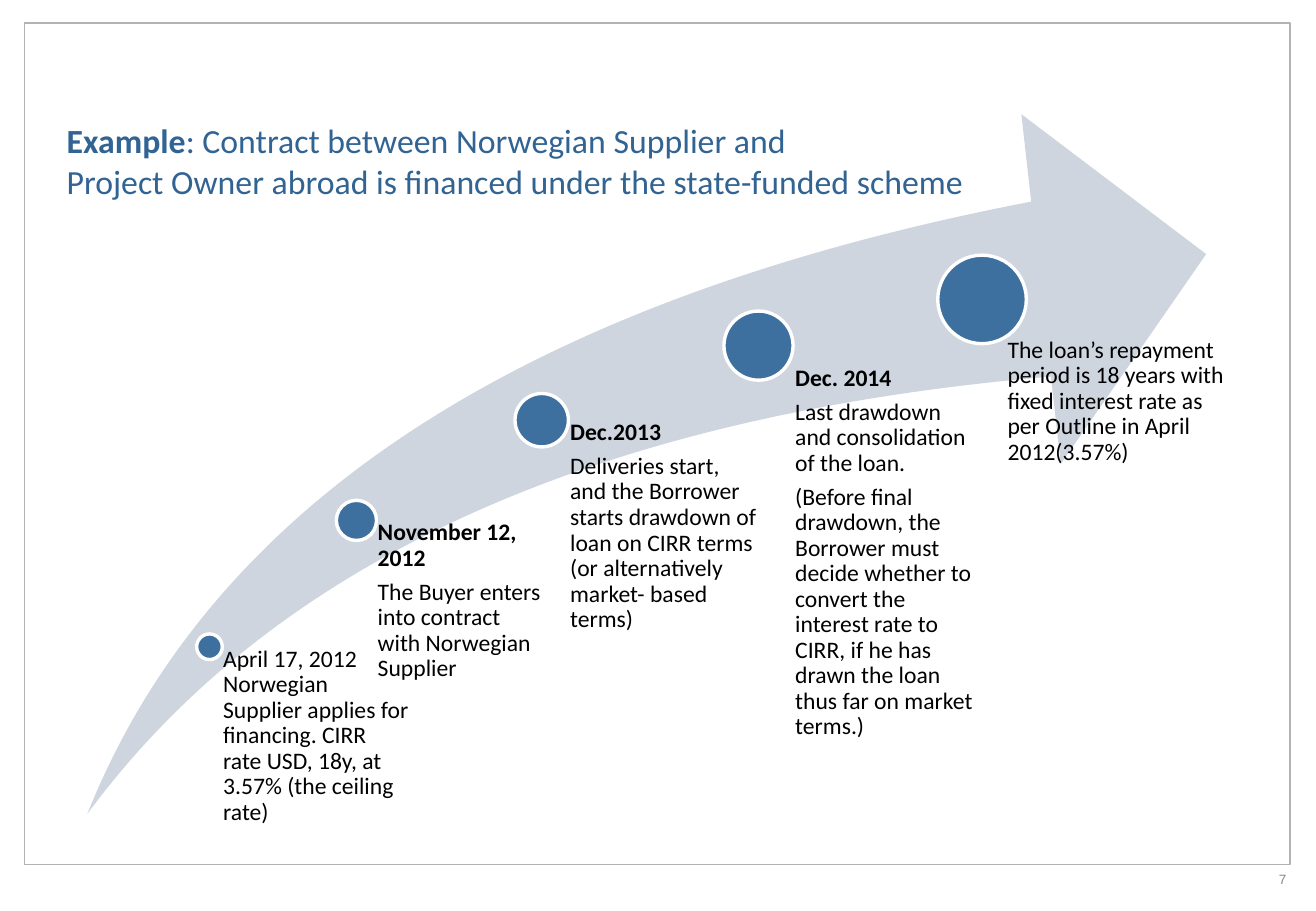
from lxml.etree import SubElement
from pptx import Presentation
from pptx.dml.color import RGBColor
from pptx.enum.shapes import MSO_SHAPE
from pptx.enum.text import MSO_ANCHOR, PP_ALIGN
from pptx.oxml.ns import qn
from pptx.util import Pt

WHITE = RGBColor(0xFF, 0xFF, 0xFF)
BLACK = RGBColor(0, 0, 0)
BORDER = RGBColor(0xB2, 0xB2, 0xB2)
GREY = RGBColor(0x89, 0x89, 0x89)
SWOOSH = RGBColor(0xCE, 0xD5, 0xDF)
DOT = RGBColor(0x3E, 0x70, 0x9F)
TITLE = RGBColor(0x31, 0x63, 0x93)

# Dot centre and diameter, text shift from that centre, text size, heading, body
STEPS = [
    ((72.4, 315.7), 15.2, (0, 0), (118.8, 98.6), None,
     ["April 17, 2012 Norwegian Supplier applies for financing. "
      "CIRR rate USD, 18y, at 3.57% (the ceiling rate)"]),
    ((159.5, 240.8), 23.8, (0, 0), (110.2, 173.5), "November 12, 2012",
     ["The Buyer enters into contract with Norwegian Supplier"]),
    ((269.3, 181.4), 31.7, (0, 0), (128.2, 232.6), "Dec.2013",
     ["Deliveries start, and the Borrower starts drawdown of loan on CIRR "
      "terms (or alternatively market- based terms)"]),
    ((397.8, 137.2), 41, (0, 12), (132.5, 253.4), "Dec. 2014",
     ["Last drawdown and consolidation of the loan.",
      "(Before final drawdown, the Borrower must decide whether to convert "
      "the interest rate to CIRR, if he has drawn the loan thus far on "
      "market terms.)"]),
    ((530.3, 109.8), 52.5, (-12.7, 22.7), (158.4, 259.9), None,
     ["The loan’s repayment period is 18 years with fixed interest rate as "
      "per Outline in April 2012(3.57%)"]),
]


def add_form(slide, kind, box, fill, line=None, weight=0):
    form = slide.shapes.add_shape(kind, *map(Pt, box))
    form.shadow.inherit = False
    form.fill.solid()
    form.fill.fore_color.rgb = fill
    if line is None:
        form.line.fill.background()
    else:
        form.line.color.rgb = line
        form.line.width = Pt(weight)
    return form


def add_text(slide, box):
    frame = slide.shapes.add_textbox(*map(Pt, box)).text_frame
    frame.word_wrap = True
    return frame


def set_font(font, name, size, color):
    font.name, font.size = name, Pt(size)
    font.color.rgb = color


def add_title(slide, box):
    frame = add_text(slide, box)
    first, second = frame.paragraphs[0], frame.add_paragraph()
    lead = first.add_run()
    lead.text = "Example"
    lead.font.bold = True
    first.add_run().text = ": Contract between Norwegian Supplier and"
    second.text = "Project Owner abroad is financed under the state-funded scheme"
    for para in frame.paragraphs:
        set_font(para.font, "Calibri", 20, TITLE)


def add_step(slide, mid, size, box, head, body):
    """Put a dot around its centre and the step's text in the given box."""
    x, y = mid
    add_form(slide, MSO_SHAPE.OVAL, (x - size / 2, y - size / 2, size, size),
             DOT, WHITE, 2)
    frame = add_text(slide, box)
    frame.margin_left = Pt(size * 0.53)
    frame.margin_top = frame.margin_right = frame.margin_bottom = 0
    lines = [head, *body] if head else body
    for i, line in enumerate(lines):
        para = frame.add_paragraph() if i else frame.paragraphs[0]
        para.text = line
        para.line_spacing = 0.9
        para.space_after = Pt(4.9)
        set_font(para.font, "Calibri", 14, BLACK)
        para.font.bold = line == head


def add_path(slide, box):
    """Draw the rising arrow with its steps."""
    left, top = box[:2]
    arrow = add_form(slide, MSO_SHAPE.SWOOSH_ARROW, box, SWOOSH)
    arrow.adjustments[0] = arrow.adjustments[1] = 0.25
    for (x, y), size, (dx, dy), area, head, body in STEPS:
        mid = left + x, top + y
        spot = mid[0] + dx, mid[1] + dy, *area
        add_step(slide, mid, size, spot, head, body)


def add_number(slide, box):
    frame = add_text(slide, box)
    frame.vertical_anchor = MSO_ANCHOR.MIDDLE
    para = frame.paragraphs[0]
    para.alignment = PP_ALIGN.RIGHT
    field = SubElement(para._p, qn("a:fld"), type="slidenum",
                       id="{B6F15528-21DE-4FAA-801E-634DDDAF4B2B}")
    SubElement(field, qn("a:rPr"), lang="en-US")
    SubElement(field, qn("a:t")).text = "7"
    set_font(para.font, "Arial", 8, GREY)


def main():
    deck = Presentation()
    deck.slide_width, deck.slide_height = Pt(780), Pt(540)
    # The page number is a field, so numbering starts at this slide's number
    deck.element.set("firstSlideNum", "7")
    slide = deck.slides.add_slide(deck.slide_layouts[6])
    add_form(slide, MSO_SHAPE.RECTANGLE, (14.4, 13.7, 750.2, 499), WHITE,
             BORDER, 0.75)
    add_number(slide, (689, 508.3, 80.6, 25.2))
    add_path(slide, (51.8, 67.7, 663.1, 414.7))
    add_title(slide, (32.4, 67.7, 596.9, 72.7))
    deck.save("out.pptx")


if __name__ == "__main__":
    main()
